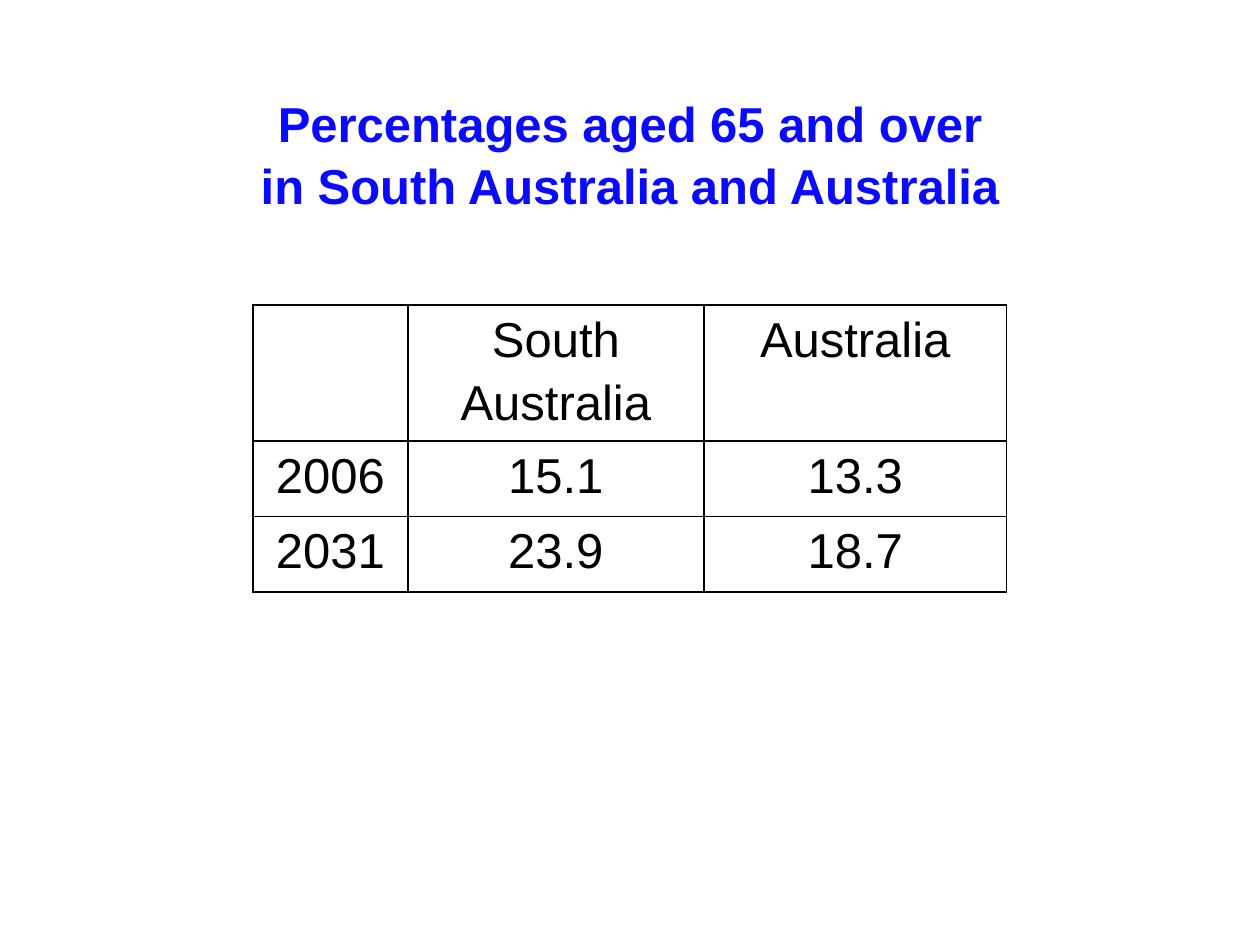
from dataclasses import dataclass

from lxml import etree
from pptx import Presentation
from pptx.dml.color import RGBColor
from pptx.enum.text import MSO_ANCHOR, MSO_AUTO_SIZE, PP_ALIGN
from pptx.oxml.ns import qn
from pptx.slide import Slide
from pptx.util import Cm, Pt

CENTER = PP_ALIGN.CENTER
MIDDLE = MSO_ANCHOR.MIDDLE
TOP = MSO_ANCHOR.TOP
NO_AUTOFIT = MSO_AUTO_SIZE.NONE
TITLE_ONLY = 5


@dataclass(frozen=True)
class Theme:
    font: str = "Arial"
    size: int = 28
    title: str = "0A0AFF"
    text: str = "000000"
    border: str = "000000"
    border_width: int = 1


@dataclass(frozen=True)
class TableRow:
    height: float
    texts: tuple[str, str, str]


THEME = Theme()
TITLE = "Percentages aged 65 and over\nin South Australia and Australia"
COLUMN_WIDTHS = (3.12, 5.97, 6.1)
ROWS = (
    TableRow(2.74, ("", "South Australia", "Australia")),
    TableRow(1.52, ("2006", "15.1", "13.3")),
    TableRow(1.52, ("2031", "23.9", "18.7")),
)


def format_text(frame, color: str, spacing: float, bold: bool = False) -> None:
    for para in frame.paragraphs:
        para.alignment = CENTER
        para.line_spacing = spacing
        para.font.size = Pt(THEME.size)
        for span in para.runs:
            span.font.name = THEME.font
            span.font.size = Pt(THEME.size)
            span.font.bold = bold
            span.font.color.rgb = RGBColor.from_string(color)


def add_borders(cell) -> None:
    properties = cell._tc.get_or_add_tcPr()
    for side in ("a:lnL", "a:lnR", "a:lnT", "a:lnB"):
        line = etree.SubElement(properties, qn(side), w=str(Pt(THEME.border_width)))
        fill = etree.SubElement(line, qn("a:solidFill"))
        etree.SubElement(fill, qn("a:srgbClr"), val=THEME.border)


def add_title(page: Slide) -> None:
    box = page.shapes.title
    box.left, box.top, box.width, box.height = Cm(2.49), Cm(1.75), Cm(20.42), Cm(2.64)
    frame = box.text_frame
    frame.text = TITLE
    frame.word_wrap = True
    frame.auto_size = NO_AUTOFIT
    frame.vertical_anchor = MIDDLE
    format_text(frame, THEME.title, 1.05, bold=True)


def add_percentages(page: Slide) -> None:
    width = sum(COLUMN_WIDTHS)
    height = sum(row.height for row in ROWS)
    table = page.shapes.add_table(
        len(ROWS), len(COLUMN_WIDTHS), Cm(5.1), Cm(6.15), Cm(width), Cm(height)
    ).table
    table.first_row = False
    table.horz_banding = False
    for column, column_width in zip(table.columns, COLUMN_WIDTHS):
        column.width = Cm(column_width)
    for table_row, row in zip(table.rows, ROWS):
        table_row.height = Cm(row.height)
        for cell, text in zip(table_row.cells, row.texts):
            cell.text_frame.text = text
            cell.margin_left = cell.margin_right = Cm(0.18)
            cell.margin_top = cell.margin_bottom = Cm(0)
            cell.vertical_anchor = TOP
            add_borders(cell)
            cell.fill.background()
            format_text(cell.text_frame, THEME.text, 1.15)


def main() -> None:
    deck = Presentation()
    deck.slide_width, deck.slide_height = Cm(25.4), Cm(19.05)
    page = deck.slides.add_slide(deck.slide_layouts[TITLE_ONLY])
    # Table first, so the title lies in front of it
    add_percentages(page)
    add_title(page)
    deck.save("out.pptx")


if __name__ == "__main__":
    main()
